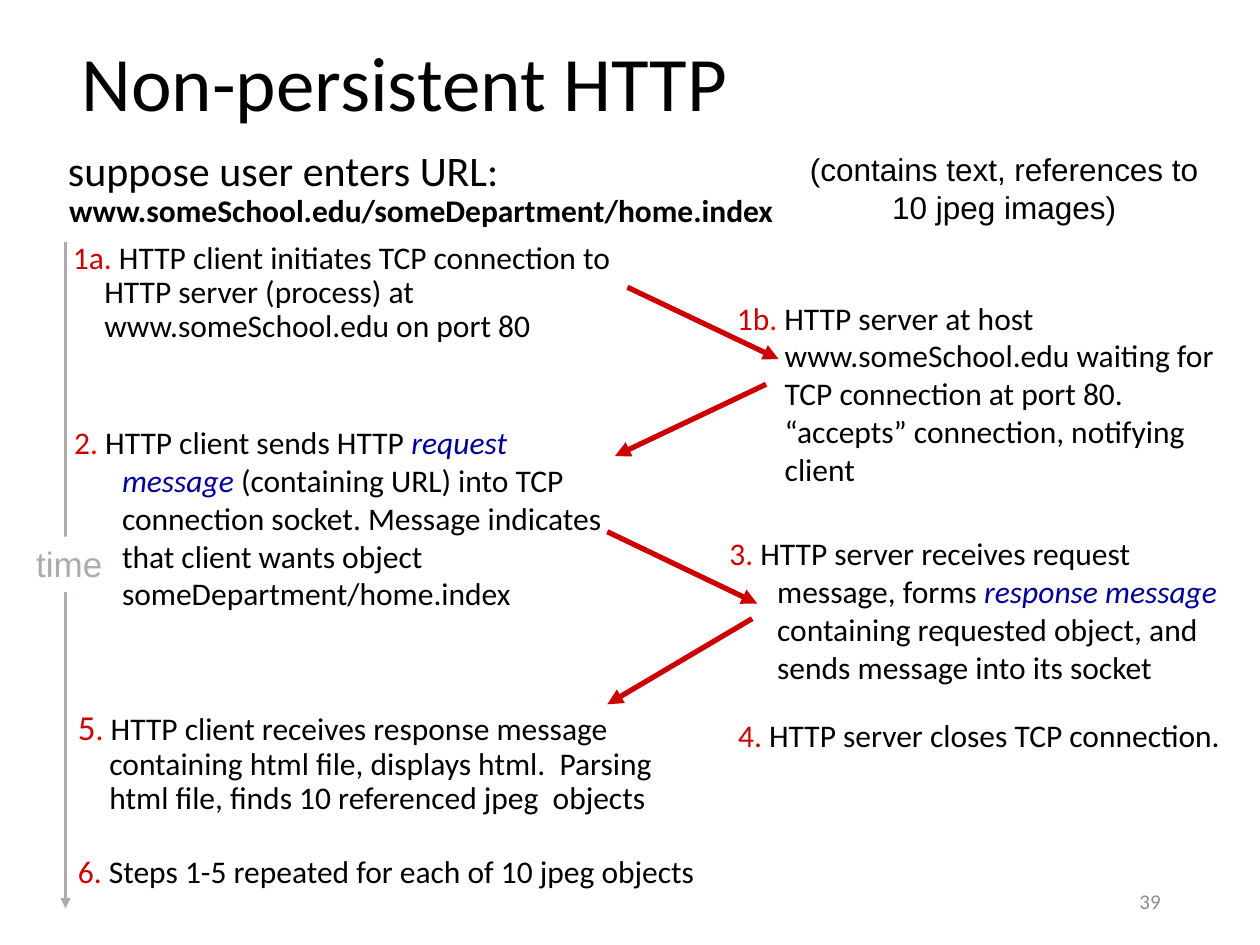
from lxml import etree
from pptx import Presentation
from pptx.dml.color import RGBColor
from pptx.enum.shapes import MSO_CONNECTOR, MSO_SHAPE
from pptx.enum.text import MSO_ANCHOR as ANCHOR, PP_ALIGN as ALIGN
from pptx.oxml.ns import qn
from pptx.util import Inches, Pt

COLORS = {
    "text": "000000",
    "number": "CC0000",
    "dot": "FF0000",
    "term": "000099",
    "time": "AFABAB",
    "page": "8C8C8C",
    "white": "FFFFFF",
}


def rgb(name):
    return RGBColor.from_string(COLORS[name])


def write(shape, runs, size=18, font="Calibri", bold=False, indent=0, spacing=None,
          align=ALIGN.LEFT, anchor=ANCHOR.TOP, wrap=True):
    """Fill a shape with one paragraph; each run is (text, colour) or (text, colour, size)."""
    frame = shape.text_frame
    frame.word_wrap = wrap
    frame.vertical_anchor = anchor
    paragraph = frame.paragraphs[0]
    paragraph.alignment = align
    if spacing:
        paragraph.line_spacing = spacing
    if indent:
        props = paragraph._p.get_or_add_pPr()
        props.set("marL", str(Inches(indent)))
        props.set("indent", str(-Inches(indent)))
    for words, color, *own_size in runs:
        run = paragraph.add_run()
        run.text = words
        run.font.name = font
        run.font.size = Pt(own_size[0] if own_size else size)
        run.font.bold = bold
        run.font.italic = color == "term"
        run.font.color.rgb = rgb(color)


prs = Presentation()
prs.slide_width, prs.slide_height = Inches(10), Inches(7.5)
slide = prs.slides.add_slide(prs.slide_layouts[6])
shapes = slide.shapes

# Time axis and message arrows: start x, start y, end x, end y, colour, width
arrows = [
    (0.52, 1.92, 0.52, 7.21, "time", 1.5),
    (4.98, 2.28, 6.18, 2.85, "number", 3),
    (6.08, 3.05, 4.88, 3.62, "number", 3),
    (4.82, 4.22, 6.01, 4.79, "number", 3),
    (5.97, 4.91, 4.82, 5.59, "number", 3),
]
for *ends, color, width in arrows:
    arrow = shapes.add_connector(MSO_CONNECTOR.STRAIGHT, *map(Inches, ends))
    arrow.line.color.rgb = rgb(color)
    arrow.line.width = Pt(width)
    etree.SubElement(arrow.line._get_or_add_ln(), qn("a:tailEnd"), type="triangle")
    etree.SubElement(arrow._element.spPr, qn("a:effectLst"))

time_label = shapes.add_shape(MSO_SHAPE.RECTANGLE, *map(Inches, (0.18, 4.26, 0.74, 0.44)))
time_label.shadow.inherit = False
time_label.fill.solid()
time_label.fill.fore_color.rgb = rgb("white")
time_label.line.fill.background()
write(time_label, [("time", "time")], size=20, font="Arial", align=ALIGN.CENTER, wrap=False)

# Text boxes: left, top, width, height; runs; format
tight = {"indent": 0.25, "spacing": 0.9}
hanging = {"indent": 0.38}
texts = [
    ((0.55, 0.21, 8.5, 0.95), [("Non-persistent HTTP", "text")],
     {"size": 44, "spacing": 0.9, "anchor": ANCHOR.MIDDLE}),
    ((0.44, 1.14, 8.69, 0.51), [("suppose user enters URL:", "text")], {"size": 24, **tight}),
    ((0.45, 1.51, 6.6, 0.51), [("www.someSchool.edu/someDepartment/home.index", "text")],
     {"bold": True, "spacing": 0.85, **hanging}),
    ((6.21, 1.14, 3.52, 0.71), [("(contains text, references to 10 jpeg images)", "text")],
     {"font": "Arial", "align": ALIGN.CENTER}),
    ((0.48, 1.87, 4.55, 2.08),
     [("1a", "number"), (".", "dot"),
      (" HTTP client initiates TCP connection to HTTP server (process) at "
       "www.someSchool.edu on port 80", "text")], tight),
    ((5.75, 2.32, 4.17, 1.65),
     [("1b", "number"), (".", "dot"),
      (" HTTP server at host www.someSchool.edu waiting for TCP connection at port 80.  "
       "“accepts” connection, notifying client", "text")], hanging),
    ((0.49, 3.31, 4.39, 2.31),
     [("2", "number"), (".", "dot"), (" HTTP client sends HTTP ", "text"),
      ("request message", "term"),
      (" (containing URL) into TCP connection socket. Message indicates that client "
       "wants object someDepartment/home.index", "text")], hanging),
    ((5.69, 4.19, 4.17, 1.97),
     [("3", "number"), (".", "dot"), (" HTTP server receives request message, forms ", "text"),
      ("response message", "term"),
      (" containing requested object, and sends message into its socket", "text")], hanging),
    ((5.76, 5.63, 4.17, 0.57),
     [("4.", "number"), (" HTTP server closes TCP connection.", "text")], hanging),
    ((0.52, 5.59, 4.84, 1.68),
     [("5", "number", 20), (".", "number"),
      (" HTTP client receives response message containing html file, displays html.  "
       "Parsing html file, finds 10 referenced jpeg  objects", "text")], tight),
    ((0.52, 6.71, 5.45, 0.73),
     [("6.", "number"), (" Steps 1-5 repeated for each of 10 jpeg objects", "text")], hanging),
    ((7.06, 6.95, 2.25, 0.4), [("39", "page")],
     {"size": 12, "align": ALIGN.RIGHT, "anchor": ANCHOR.MIDDLE}),
]
for place, runs, style in texts:
    write(shapes.add_textbox(*map(Inches, place)), runs, **style)

prs.save("out.pptx")
